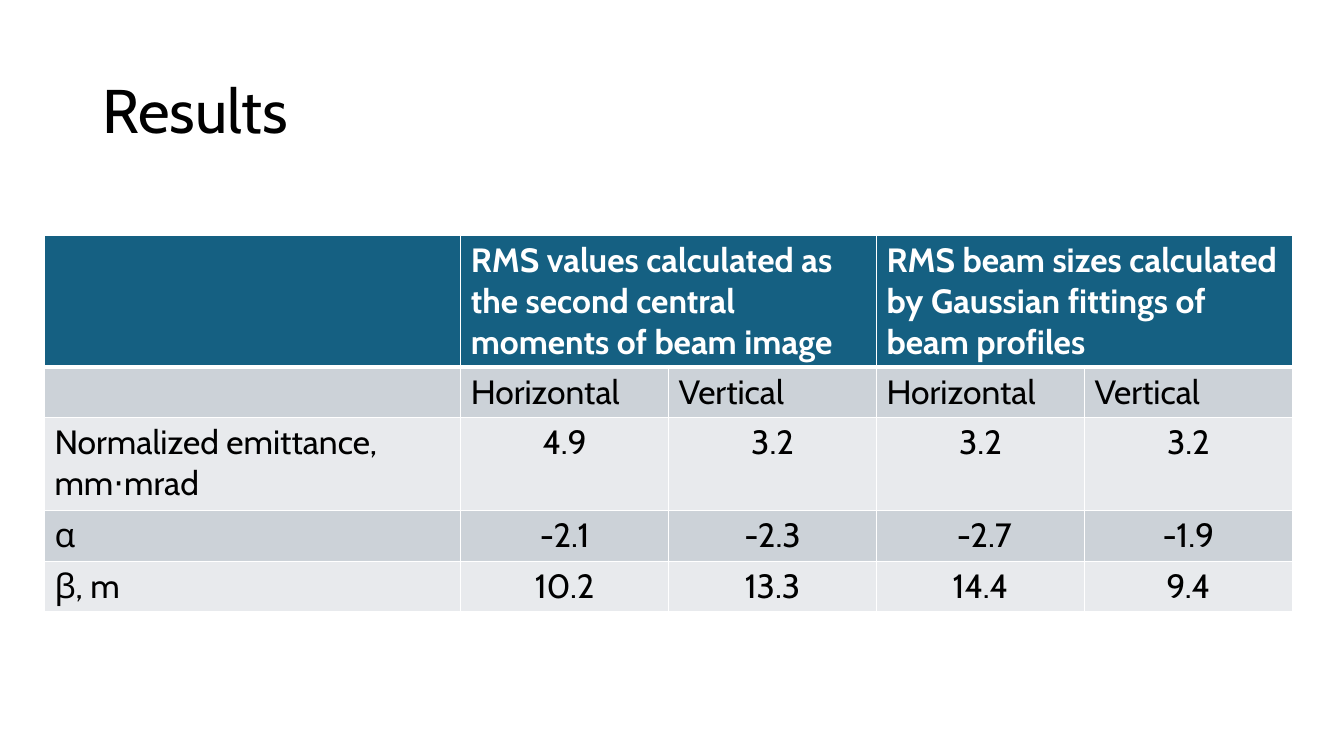
import dataclasses

import lxml.etree
import pptx
import pptx.dml.color
import pptx.enum.text
import pptx.oxml.ns
import pptx.util
from pptx.util import Cm


@dataclasses.dataclass(frozen=True)
class Theme:
    font: str = "Cabin"
    ink: str = "000000"
    white: str = "FFFFFF"
    header: str = "156082"
    bands: tuple = ("CCD2D8", "E8EAED")
    title_size: int = 44
    table_size: int = 24
    rule: int = 1
    header_rule: int = 3


THEME = Theme()
ALIGN = pptx.enum.text.PP_ALIGN

HEADINGS = {
    1: "RMS values calculated as the second central moments of beam image",
    3: "RMS beam sizes calculated by Gaussian fittings of beam profiles",
}
BODY = [
    ["", "Horizontal", "Vertical", "Horizontal", "Vertical"],
    ["Normalized emittance, mm⋅mrad", "4.9", "3.2", "3.2", "3.2"],
    ["α", "-2.1", "-2.3", " -2.7", "-1.9"],
    ["β, m", "10.2", "13.3", "14.4", "9.4"],
]
COLUMN_WIDTHS = [10.49] + [5.24] * 4
ROW_HEIGHTS = [3.32, 1.28, 2.34, 1.28, 1.28]


def rgb(value):
    return pptx.dml.color.RGBColor.from_string(value)


def add_span(para, text, size, color, bold=False):
    span = para.add_run()
    span.text = text
    span.font.name = THEME.font
    span.font.size = pptx.util.Pt(size)
    span.font.bold = bold
    span.font.color.rgb = rgb(color)


def add_title(page, text):
    box = page.shapes.add_textbox(Cm(2.33), Cm(1.01), Cm(29.21), Cm(3.68))
    frame = box.text_frame
    frame.word_wrap = True
    frame.vertical_anchor = pptx.enum.text.MSO_ANCHOR.MIDDLE
    para = frame.paragraphs[0]
    para.line_spacing = 0.9
    add_span(para, text, THEME.title_size, THEME.ink)


def set_borders(cell, top, bottom):
    properties = cell._tc.get_or_add_tcPr()
    qn = pptx.oxml.ns.qn
    widths = {"lnL": THEME.rule, "lnR": THEME.rule, "lnT": top, "lnB": bottom}
    for side, width in widths.items():
        line = lxml.etree.SubElement(properties, qn(f"a:{side}"), w=str(pptx.util.Pt(width)))
        fill = lxml.etree.SubElement(line, qn("a:solidFill"))
        lxml.etree.SubElement(fill, qn("a:srgbClr"), val=THEME.white)


def fill_cell(cell, text, fill, color, bold=False, align=ALIGN.LEFT):
    cell.fill.solid()
    cell.fill.fore_color.rgb = rgb(fill)
    para = cell.text_frame.paragraphs[0]
    para.alignment = align
    if text:
        add_span(para, text, THEME.table_size, color, bold)


def add_results_table(page):
    frame = page.shapes.add_table(
        len(ROW_HEIGHTS), len(COLUMN_WIDTHS), Cm(1.12), Cm(5.92),
        Cm(sum(COLUMN_WIDTHS)), Cm(sum(ROW_HEIGHTS)))
    table = frame.table
    for column, width in zip(table.columns, COLUMN_WIDTHS):
        column.width = Cm(width)
    for row, height in zip(table.rows, ROW_HEIGHTS):
        row.height = Cm(height)

    # Header row: each method spans its two planes
    for column in range(len(COLUMN_WIDTHS)):
        cell = table.cell(0, column)
        set_borders(cell, THEME.rule, THEME.header_rule)
        fill_cell(cell, HEADINGS.get(column, ""), THEME.header, THEME.white, bold=True)
    for column in HEADINGS:
        table.cell(0, column).merge(table.cell(0, column + 1))

    # Banded body: values are centred, labels stay left
    for row, texts in enumerate(BODY, start=1):
        top = THEME.header_rule if row == 1 else THEME.rule
        for column, text in enumerate(texts):
            cell = table.cell(row, column)
            set_borders(cell, top, THEME.rule)
            align = ALIGN.CENTER if row > 1 and column > 0 else ALIGN.LEFT
            fill_cell(cell, text, THEME.bands[(row - 1) % 2], THEME.ink, align=align)


def main():
    deck = pptx.Presentation()
    deck.slide_width = Cm(33.87)
    deck.slide_height = Cm(19.05)
    page = deck.slides.add_slide(deck.slide_layouts[6])
    add_title(page, "Results")
    add_results_table(page)
    deck.save("out.pptx")


if __name__ == "__main__":
    main()
